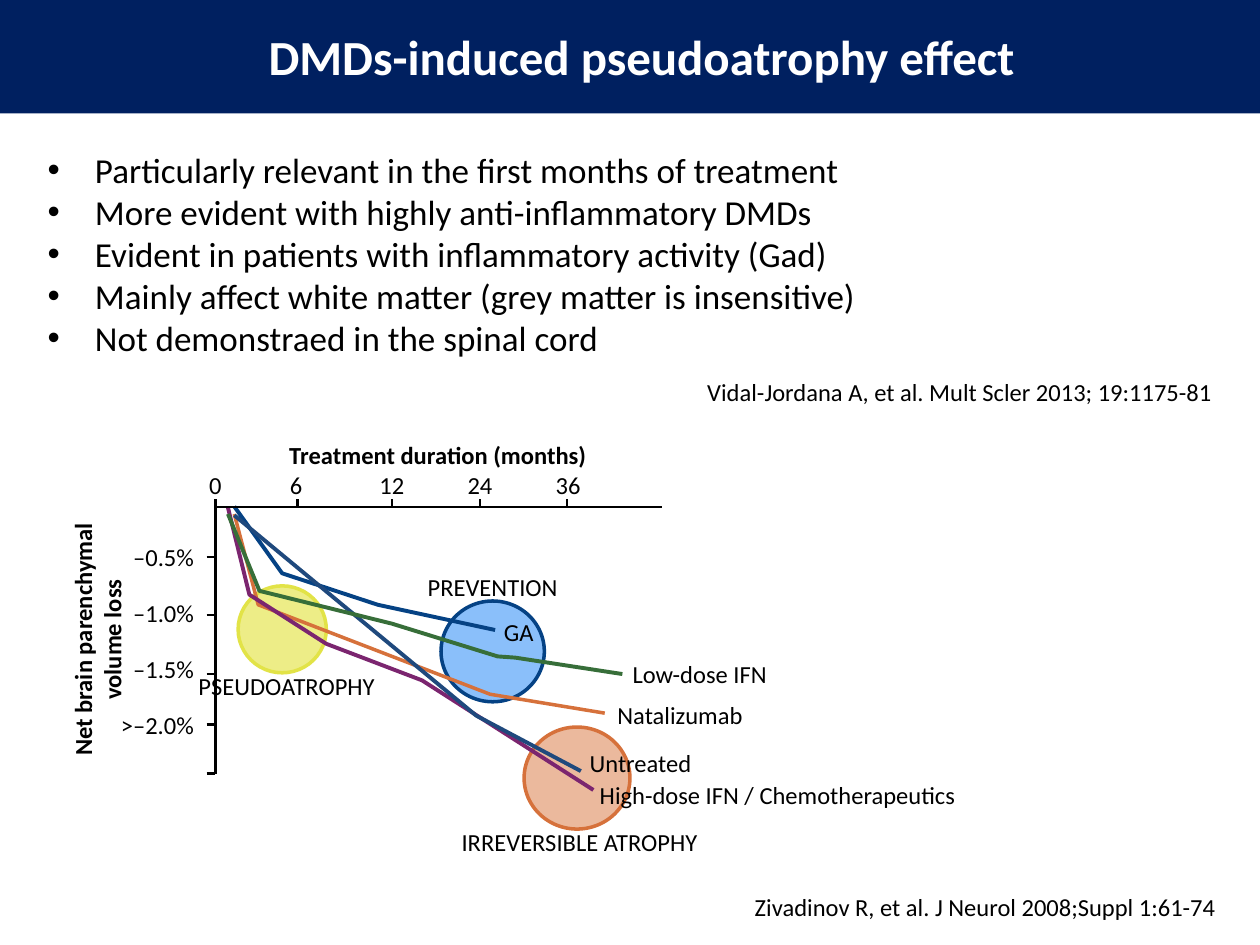
from typing import NamedTuple

from lxml.etree import SubElement
from pptx import Presentation
from pptx.dml.color import RGBColor
from pptx.enum.shapes import MSO_CONNECTOR, MSO_SHAPE
from pptx.enum.text import MSO_ANCHOR, MSO_AUTO_SIZE, PP_ALIGN
from pptx.oxml.ns import qn
from pptx.util import Inches, Pt


class Theme(NamedTuple):
    font: str = "Calibri"
    title_size: int = 28
    bullet_size: int = 20
    label_size: int = 14
    axis_width: float = 1.5
    ring_width: float = 2
    curve_width: float = 2.25
    band: str = "002060"
    white: str = "FFFFFF"
    black: str = "000000"
    blue: str = "054284"
    orange: str = "D6713B"
    purple: str = "7B256F"
    slate: str = "1F497D"
    green: str = "376E39"


class Zone(NamedTuple):
    """A circled phase of treatment with its caption."""
    box: tuple[float, float, float, float]
    fill: str
    outline: str
    caption: str
    caption_at: tuple[float, float]
    caption_width: float


class Curve(NamedTuple):
    """The course of one treatment, named at its end."""
    treatment: str
    color: str
    points: list[tuple[float, float]]
    name_at: tuple[float, float]
    name_width: float
    width: float = Theme().curve_width


class Tick(NamedTuple):
    at: float
    text: str
    text_at: float
    text_width: float


THEME = Theme()
WIDTH, HEIGHT = Inches(10), Inches(7.5)
COLUMNS, ROWS = 100, 75  # all positions below are columns and rows of this grid
LABEL_ROWS = 2.4
AXIS_LEFT, AXIS_TOP = 17.1, 40.25
SHIFT = {PP_ALIGN.LEFT: 0, PP_ALIGN.CENTER: 0.5, PP_ALIGN.RIGHT: 1}

BULLETS = [
    "Particularly relevant in the first months of treatment",
    "More evident with highly anti-inflammatory DMDs",
    "Evident in patients with inflammatory activity (Gad)",
    "Mainly affect white matter (grey matter is insensitive)",
    "Not demonstraed in the spinal cord",
]
ZONES = [
    Zone((18.9, 46.5, 7, 6.9), "EDED87", "E2E347", "PSEUDOATROPHY", (22.75, 54.4), 14.1),
    Zone((35, 47.7, 8.2, 8), "8ABFFA", THEME.blue, "PREVENTION", (39.1, 46.6), 10.4),
    Zone((41.6, 57.7, 8.4, 8.1), "EBB99D", THEME.orange, "IRREVERSIBLE ATROPHY", (46, 66.8), 18.9),
]
CURVES = [
    Curve("GA", THEME.blue, [(18.6, 40.2), (22.4, 45.5), (30, 48), (39.3, 50)], (40, 50.1), 2.4),
    Curve("Natalizumab", THEME.orange, [(18.6, 40.8), (20.5, 48), (38.9, 55.1), (48, 56.6)],
          (49, 56.7), 10.1, THEME.ring_width),
    Curve("High-dose IFN / Chemotherapeutics", THEME.purple,
          [(18.1, 40.3), (19.8, 47.2), (25.9, 51.1), (33.5, 54), (47.1, 62.7)], (47.6, 63.1), 28.5),
    Curve("Untreated", THEME.slate, [(18.6, 40.9), (37.8, 56.8), (46.1, 61.2)], (46.8, 60.5), 8.3),
    Curve("Low-dose IFN", THEME.green,
          [(18.1, 40.8), (20.6, 46.9), (31.1, 49.5), (39.5, 52.1), (40.9, 52.2), (49.4, 53.5)],
          (50.2, 53.5), 10.8),
]
MONTHS = [Tick(17.1, "0", 17.1, 1), Tick(23.6, "6", 23.5, 1), Tick(31.1, "12", 31.1, 2),
          Tick(38.1, "24", 38.1, 2), Tick(45, "36", 45.1, 2)]
LOSSES = [Tick(44.2, "–0.5%", 44.2, 4.9), Tick(48.8, "–1.0%", 48.6, 4.9),
          Tick(53.5, "–1.5%", 53.1, 4.9), Tick(57.5, ">–2.0%", 57.5, 5.9), Tick(61.4, "", 0, 0)]


def col(count: float) -> int:
    return round(WIDTH * count / COLUMNS)


def row(count: float) -> int:
    return round(HEIGHT * count / ROWS)


def color(code: str) -> RGBColor:
    return RGBColor.from_string(code)


def format_text(frame, size: float, align, ink: str = THEME.black, bold: bool = False) -> None:
    for paragraph in frame.paragraphs:
        paragraph.alignment = align
        for run in paragraph.runs:
            run.font.name = THEME.font
            run.font.size = Pt(size)
            run.font.bold = bold
            run.font.color.rgb = color(ink)


def add_text(shapes, text: str, left: float, top: float, width: float, height: float,
             align, size: float = THEME.label_size, bold: bool = False, wrap: bool = True):
    box = shapes.add_textbox(col(left), row(top), col(width), row(height))
    box.text_frame.word_wrap = wrap
    box.text_frame.text = text
    format_text(box.text_frame, size, align, bold=bold)
    return box


def add_label(shapes, text: str, x: float, y: float, width: float, align=PP_ALIGN.CENTER,
              bold: bool = False, height: float = LABEL_ROWS):
    """Place a marginless label whose aligned edge is at x and whose middle is at y."""
    label = add_text(shapes, text, x - width * SHIFT[align], y - height / 2, width, height,
                     align, bold=bold, wrap=False)
    frame = label.text_frame
    frame.margin_left = frame.margin_right = frame.margin_top = frame.margin_bottom = 0
    frame.vertical_anchor = MSO_ANCHOR.MIDDLE
    return label


def add_axis_line(shapes, x1: float, y1: float, x2: float, y2: float) -> None:
    line = shapes.add_connector(MSO_CONNECTOR.STRAIGHT, col(x1), row(y1), col(x2), row(y2))
    line.line.color.rgb = color(THEME.black)
    line.line.width = Pt(THEME.axis_width)
    SubElement(line.element.spPr, qn("a:effectLst"))


def add_zone(shapes, zone: Zone) -> None:
    left, top, width, height = zone.box
    circle = shapes.add_shape(MSO_SHAPE.OVAL, col(left), row(top), col(width), row(height))
    circle.shadow.inherit = False
    circle.fill.solid()
    circle.fill.fore_color.rgb = color(zone.fill)
    circle.line.color.rgb = color(zone.outline)
    circle.line.width = Pt(THEME.ring_width)


def add_curve(shapes, curve: Curve) -> None:
    start, *others = [(col(x), row(y)) for x, y in curve.points]
    builder = shapes.build_freeform(*start)
    builder.add_line_segments(others, close=False)
    course = builder.convert_to_shape()
    course.shadow.inherit = False
    course.fill.background()
    course.line.color.rgb = color(curve.color)
    course.line.width = Pt(curve.width)


def add_header(slide) -> None:
    band = slide.shapes.add_shape(MSO_SHAPE.RECTANGLE, 0, 0, WIDTH, row(9))
    band.shadow.inherit = False
    band.fill.solid()
    band.fill.fore_color.rgb = color(THEME.band)
    band.line.fill.background()
    title = slide.shapes.title
    title.element.addprevious(band.element)  # the band lies behind the title
    title.left, title.top, title.width, title.height = col(1.8), row(-0.3), col(98.2), row(9.5)
    title.text_frame.text = "DMDs-induced pseudoatrophy effect"
    title.text_frame.auto_size = MSO_AUTO_SIZE.NONE
    title.text_frame.vertical_anchor = MSO_ANCHOR.MIDDLE
    format_text(title.text_frame, THEME.title_size, PP_ALIGN.CENTER, THEME.white, bold=True)


def add_bullets(shapes) -> None:
    box = add_text(shapes, "\n".join(BULLETS), 2.8, 11.3, 89.1, 18.5,
                   PP_ALIGN.JUSTIFY, THEME.bullet_size)
    for paragraph in box.text_frame.paragraphs:
        properties = paragraph._p.get_or_add_pPr()
        properties.set("marL", str(col(3.75)))
        properties.set("indent", str(-col(3.75)))
        SubElement(properties, qn("a:buFont"), typeface="Arial")
        SubElement(properties, qn("a:buChar"), char="•")


def add_volume_chart(shapes) -> None:
    # Zones lie behind the curves
    for zone in ZONES:
        add_zone(shapes, zone)
    for curve in CURVES:
        add_curve(shapes, curve)
    # Axes and their ticks
    add_axis_line(shapes, AXIS_LEFT, AXIS_TOP, 52.5, AXIS_TOP)
    add_axis_line(shapes, AXIS_LEFT, AXIS_TOP, AXIS_LEFT, LOSSES[-1].at)
    for month in MONTHS:
        add_axis_line(shapes, month.at, AXIS_TOP, month.at, 39.6)
        add_label(shapes, month.text, month.text_at, 38.5, month.text_width)
    for loss in LOSSES:
        add_axis_line(shapes, 16.4, loss.at, AXIS_LEFT, loss.at)
        if loss.text:
            add_label(shapes, loss.text, 15.4, loss.text_at, loss.text_width, PP_ALIGN.RIGHT)
    add_label(shapes, "Treatment duration (months)", 34.75, 36.1, 23.7, bold=True)
    add_label(shapes, "Net brain parenchymal\vvolume loss", 7.7, 50.75, 18.6,
              bold=True, height=2 * LABEL_ROWS).rotation = 270
    # Captions and treatment names
    for zone in ZONES:
        add_label(shapes, zone.caption, *zone.caption_at, zone.caption_width)
    for curve in CURVES:
        add_label(shapes, curve.treatment, *curve.name_at, curve.name_width, PP_ALIGN.LEFT)


def main() -> None:
    deck = Presentation()
    deck.slide_width, deck.slide_height = WIDTH, HEIGHT
    slide = deck.slides.add_slide(deck.slide_layouts.get_by_name("Title Only"))
    add_header(slide)
    add_bullets(slide.shapes)
    add_volume_chart(slide.shapes.add_group_shape().shapes)
    # References
    add_text(slide.shapes, "Vidal-Jordana A, et al. Mult Scler 2013; 19:1175-81",
             52.5, 29.4, 44.7, 3.4, PP_ALIGN.RIGHT)
    reference = add_text(slide.shapes, "Zivadinov R, et al. J Neurol 2008;Suppl 1:61-74",
                         58.5, 70.7, 39, 3, PP_ALIGN.RIGHT, wrap=False)
    reference.text_frame.paragraphs[0].line_spacing = 0.85
    deck.save("out.pptx")


if __name__ == "__main__":
    main()
